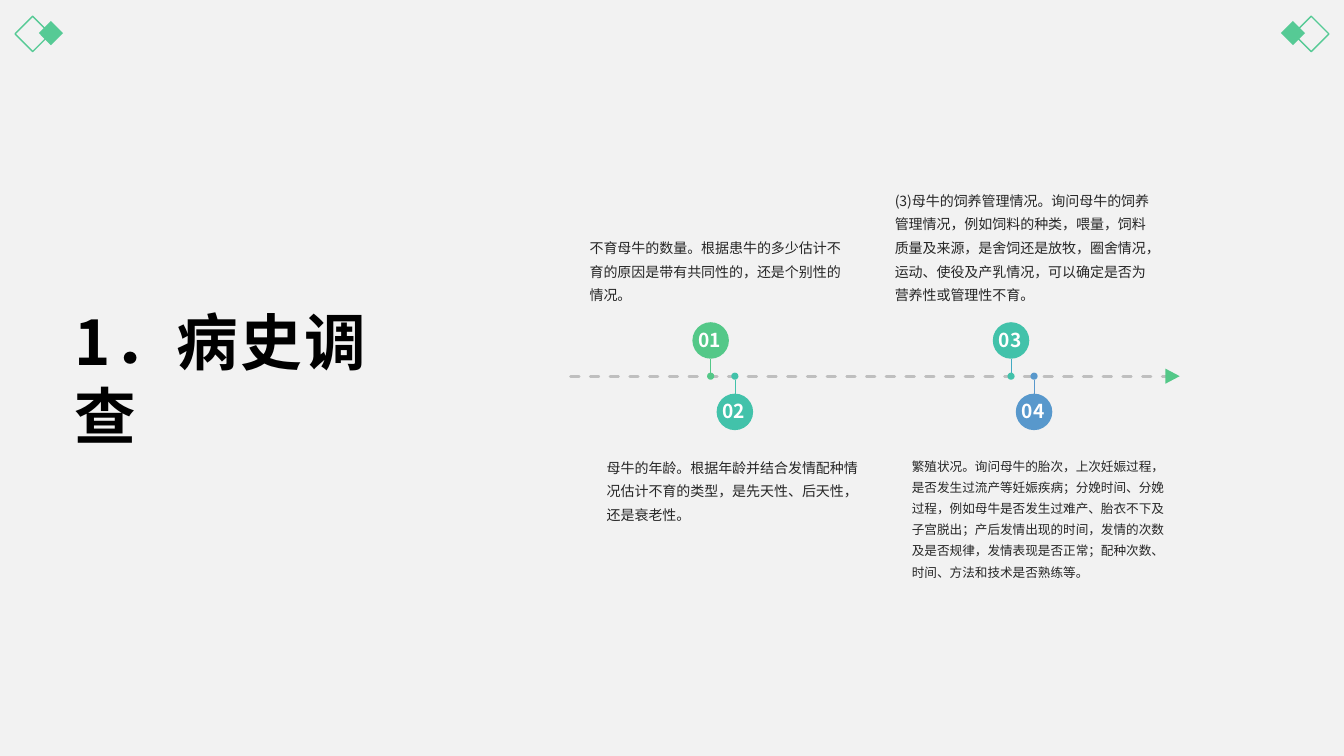
from dataclasses import dataclass
from lxml.etree import SubElement as Sub
from pptx import Presentation
from pptx.dml.color import RGBColor as RGB
from pptx.enum.dml import MSO_LINE_DASH_STYLE as Dash
from pptx.enum.shapes import MSO_CONNECTOR as Conn, MSO_SHAPE as Geo
from pptx.enum.text import MSO_ANCHOR as Anchor
from pptx.oxml.ns import qn
from pptx.util import Cm, Pt


@dataclass(frozen=True)
class Theme:
    font: str = "Noto Sans CJK SC"
    back: str = "F2F2F2"
    deco: str = "56CA95"
    green: str = "54C888"
    teal: str = "42C2AA"
    cyan: str = "42AAC2"
    blue: str = "5898CC"
    gray: str = "BFBFBF"
    black: str = "000000"
    white: str = "FFFFFF"
    ink: str = "262626"
    title: float = 44
    num: float = 13.7
    body: float = 10
    small: float = 9


T = Theme()
WIDE, HIGH = 33.87, 19.05

deck = Presentation()
deck.slide_width, deck.slide_height = Cm(WIDE), Cm(HIGH)
slide = deck.slides.add_slide(deck.slide_layouts[6])
slide.background.fill.solid()
slide.background.fill.fore_color.rgb = RGB.from_string(T.back)
shapes = slide.shapes


def draw(home, geo, box, fill=None, edge=None):
    """Add a preset shape, either filled or outlined."""
    item = home.add_shape(geo, *map(Cm, box))
    item.shadow.inherit = False
    if fill:
        item.fill.solid()
        item.fill.fore_color.rgb = RGB.from_string(fill)
    else:
        item.fill.background()
    if edge:
        item.line.color.rgb = RGB.from_string(edge)
        item.line.width = Pt(1)
    else:
        item.line.fill.background()
    return item


def write(box, text, look, hue, frame=None, space=None):
    """Add a wrapped text box with one run."""
    area = shapes.add_textbox(*map(Cm, box)).text_frame
    for key, val in {"word_wrap": True, **(frame or {})}.items():
        setattr(area, key, val)
    para = area.paragraphs[0]
    para.line_spacing = space
    run = para.add_run()
    run.text = text
    for key, val in {"name": T.font, **look}.items():
        setattr(run.font, key, val)
    run.font.color.rgb = RGB.from_string(hue)
    Sub(run.font._element, qn("a:ea"), typeface=T.font)
    return run


# Corner diamonds, mirrored left and right
for right in (True, False):
    pair = shapes.add_group_shape().shapes
    for gap, top, size, paint in (
        (0.98, 0.53, 0.61, {"fill": T.deco}),
        (0.38, 0.41, 0.89, {"edge": T.deco}),
    ):
        left = WIDE - gap - size if right else gap
        draw(pair, Geo.DIAMOND, (left, top, size, size), **paint)

# Title
pad = {"margin_left": Cm(0.18), "margin_right": Cm(0.18),
       "margin_top": Cm(0.08), "margin_bottom": Cm(0.08)}
head = write((1.7, 7.62, 8.97, 3.81), "1．病史调查",
             {"size": Pt(T.title), "bold": True}, T.black,
             {"vertical_anchor": Anchor.MIDDLE, **pad})
head.font._element.set("spc", "160")

# Time axis and the stems of its four stops
AXIS, DISC, DOT, STEP = 9.48, 0.92, 0.18, 0.9
stops = (
    ("01", 17.91, T.green, T.green, T.body,
     "不育母牛的数量。根据患牛的多少估计不育的原因是带有共同性的，还是个别性的情况。"),
    ("02", 18.52, T.teal, T.teal, T.body,
     "母牛的年龄。根据年龄并结合发情配种情况估计不育的类型，是先天性、后天性，还是衰老性。"),
    ("03", 25.48, T.teal, T.cyan, T.body,
     "(3)母牛的饲养管理情况。询问母牛的饲养管理情况，例如饲料的种类，喂量，饲料质量及来源，"
     "是舍饲还是放牧，圈舍情况，运动、使役及产乳情况，可以确定是否为营养性或管理性不育。"),
    ("04", 26.06, T.blue, T.blue, T.small,
     "繁殖状况。询问母牛的胎次，上次妊娠过程，是否发生过流产等妊娠疾病；分娩时间、分娩过程，"
     "例如母牛是否发生过难产、胎衣不下及子宫脱出；产后发情出现的时间，发情的次数及是否规律，"
     "发情表现是否正常；配种次数、时间、方法和技术是否熟练等。"),
)
lines = [(14.38, AXIS, 29.39, AXIS, T.gray, 2)]
for i, (num, mid, hue, stem, size, text) in enumerate(stops):
    side = 1 if i % 2 else -1
    lines.append((mid, AXIS + side * DOT / 2,
                  mid, AXIS + side * (STEP - DISC / 2), stem, 0.5))
for *ends, hue, thick in lines:
    line = shapes.add_connector(Conn.STRAIGHT, *map(Cm, ends))
    line.line.color.rgb = RGB.from_string(hue)
    line.line.width = Pt(thick)
    if thick == 2:
        line.line.dash_style = Dash.DASH
        line._element.spPr.find(qn("a:ln")).set("cap", "rnd")
    Sub(line._element.spPr, qn("a:effectLst"))

# Axis arrowhead
draw(shapes, Geo.ISOSCELES_TRIANGLE, (29.36, 9.3, 0.38, 0.36), T.green).rotation = 90

# Discs, dots, numbers and notes
for i, (num, mid, hue, stem, size, text) in enumerate(stops):
    col, low = divmod(i, 2)
    hub = AXIS + (STEP if low else -STEP)
    for y, d in ((hub, DISC), (AXIS, DOT)):
        draw(shapes, Geo.OVAL, (mid - d / 2, y - d / 2, d, d), hue)
    write((mid - 0.56, hub - 0.43, 1.12, 0.86), num,
          {"size": Pt(T.num), "bold": True}, T.white)
    write((14.61 + 7.69 * col + 0.43 * low, 11.28 if low else 3.86, 7.01, 3.91),
          text, {"size": Pt(size)}, T.ink,
          {"vertical_anchor": Anchor.TOP if low else Anchor.BOTTOM}, 1.4)

deck.save("out.pptx")
